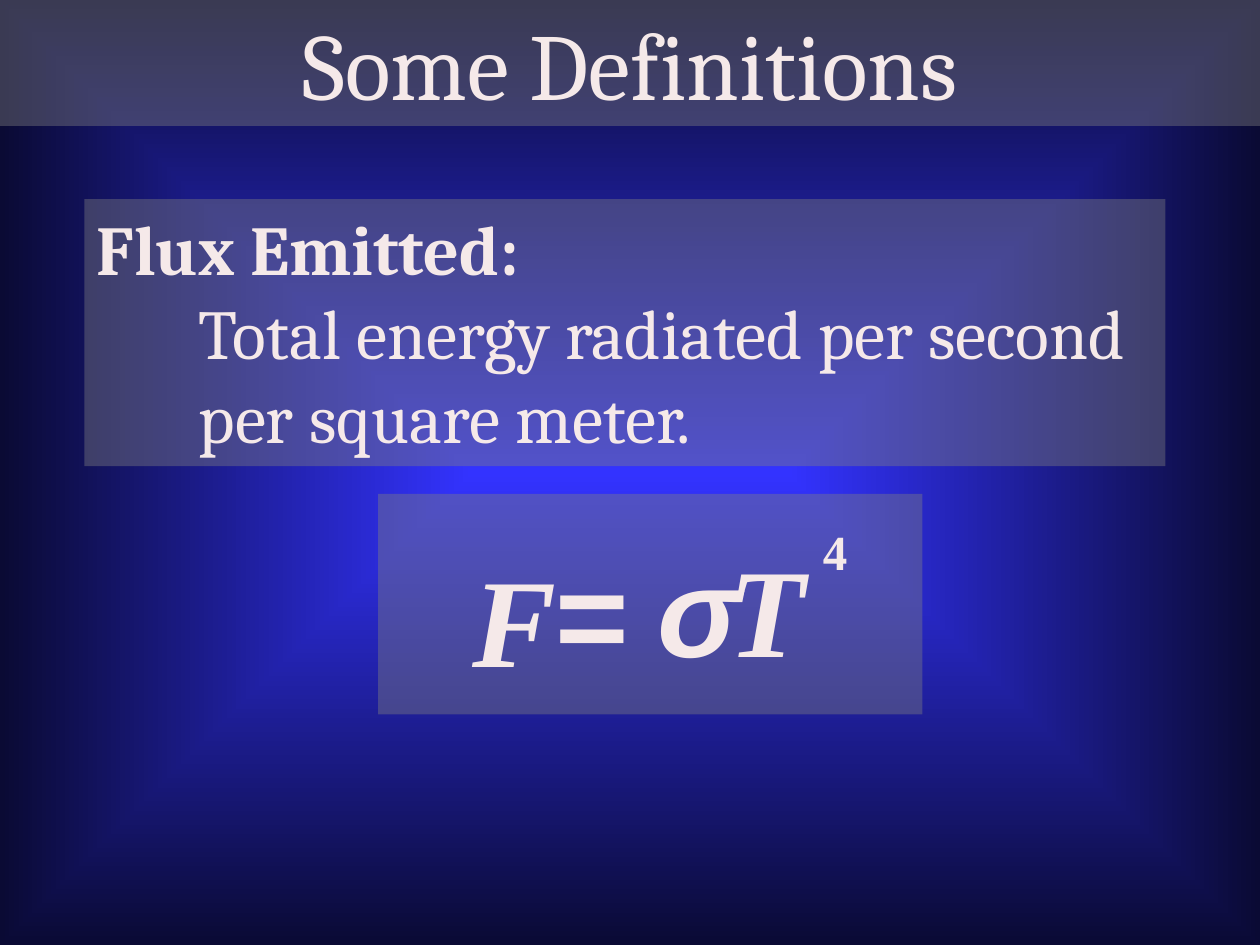
from lxml import etree
from pptx import Presentation
from pptx.dml.color import RGBColor
from pptx.enum import shapes, text
from pptx.oxml import parse_xml
from pptx.oxml.ns import nsdecls, qn
from pptx.util import Inches, Pt

COLORS = {"text": "F5E9E9", "panel": "808080", "center": "3333FF", "edge": "0A0A34"}
PANEL_ALPHA = 41


def set_background(slide):
    """Fill the slide with a gradient that runs from its center to its edges."""
    fill = slide.background.fill
    fill.solid()
    properties = slide._element.cSld.find(qn("p:bg")).find(qn("p:bgPr"))
    gradient = parse_xml(
        f'<a:gradFill {nsdecls("a")} rotWithShape="1"><a:gsLst>'
        f'<a:gs pos="0"><a:srgbClr val="{COLORS["center"]}"/></a:gs>'
        f'<a:gs pos="100000"><a:srgbClr val="{COLORS["edge"]}"/></a:gs></a:gsLst>'
        '<a:path path="shape"><a:fillToRect l="50000" t="50000" r="50000" b="50000"/></a:path>'
        "</a:gradFill>")
    properties.replace(properties[0], gradient)


def place(shape, box):
    for name, value in zip(("left", "top", "width", "height"), box):
        setattr(shape, name, Inches(value))


def fill_panel(shape):
    """Give the shape the translucent grey fill and no outline."""
    shape.fill.solid()
    shape.fill.fore_color.rgb = RGBColor.from_string(COLORS["panel"])
    color = shape._element.spPr.find(qn("a:solidFill"))[0]
    etree.SubElement(color, qn("a:alpha"), val=str(PANEL_ALPHA * 1000))
    shape.line.fill.background()


def add_panel(slide, box):
    panel = slide.shapes.add_shape(shapes.MSO_SHAPE.RECTANGLE, *map(Inches, box))
    panel.shadow.inherit = False
    fill_panel(panel)
    return panel


def write(paragraph, words, **font_format):
    run = paragraph.add_run()
    run.text = words
    for name, value in font_format.items():
        setattr(run.font, name, value)
    run.font.color.rgb = RGBColor.from_string(COLORS["text"])


def add_title(slide, box):
    title = slide.shapes.title
    place(title, box)
    fill_panel(title)
    title.text_frame.vertical_anchor = text.MSO_ANCHOR.MIDDLE
    paragraph = title.text_frame.paragraphs[0]
    paragraph.alignment = text.PP_ALIGN.CENTER
    write(paragraph, "Some Definitions", name="Cambria", size=Pt(54))


def add_definition(slide, box, term, meaning):
    frame = add_panel(slide, box).text_frame
    frame.word_wrap = True
    frame.vertical_anchor = text.MSO_ANCHOR.TOP
    paragraphs = frame.paragraphs[0], frame.add_paragraph()
    for paragraph, words, bold in zip(paragraphs, (term, meaning), (True, False)):
        paragraph.alignment = text.PP_ALIGN.LEFT
        write(paragraph, words, name="Cambria", size=Pt(40), bold=bold)
    paragraphs[1]._p.get_or_add_pPr().set("marL", str(Inches(0.81)))


def add_symbol(slide, box, symbol, **font_format):
    frame = slide.shapes.add_textbox(*map(Inches, box)).text_frame
    frame_format = dict.fromkeys(
        ("margin_left", "margin_top", "margin_right", "margin_bottom"), 0)
    frame_format.update(word_wrap=False, auto_size=text.MSO_AUTO_SIZE.SHAPE_TO_FIT_TEXT)
    for name, value in frame_format.items():
        setattr(frame, name, value)
    write(frame.paragraphs[0], symbol, bold=True, **font_format)


def add_formula(slide, box):
    add_panel(slide, box)
    left, top = box[:2]
    serif, sans = "Times New Roman", "Arial"
    symbols = [  # symbol, offset in the panel, size, font, points, italic
        ("4", 3.53, 0.22, 0.35, 0.47, serif, 28, False),
        ("T", 2.78, 0.3, 0.74, 1.21, serif, 72, True),
        ("F", 0.75, 0.38, 0.7, 1.21, serif, 72, True),
        ("σ", 2.22, 0.3, 0.65, 1.21, sans, 72, True),
        ("=", 1.41, 0.33, 0.66, 1.21, sans, 72, False),
    ]
    for symbol, x, y, width, height, font, points, italic in symbols:
        add_symbol(slide, (left + x, top + y, width, height), symbol,
                   name=font, size=Pt(points), italic=italic)


def main():
    presentation = Presentation()
    presentation.slide_width, presentation.slide_height = Inches(10), Inches(7.5)
    slide = presentation.slides.add_slide(presentation.slide_layouts[5])
    set_background(slide)
    add_title(slide, (0, 0, 10, 1))
    add_definition(slide, (0.67, 1.58, 8.58, 2.12), "Flux Emitted:",
                   "Total energy radiated per second per square meter.")
    add_formula(slide, (3, 3.92, 4.32, 1.75))
    presentation.save("out.pptx")


if __name__ == "__main__":
    main()
